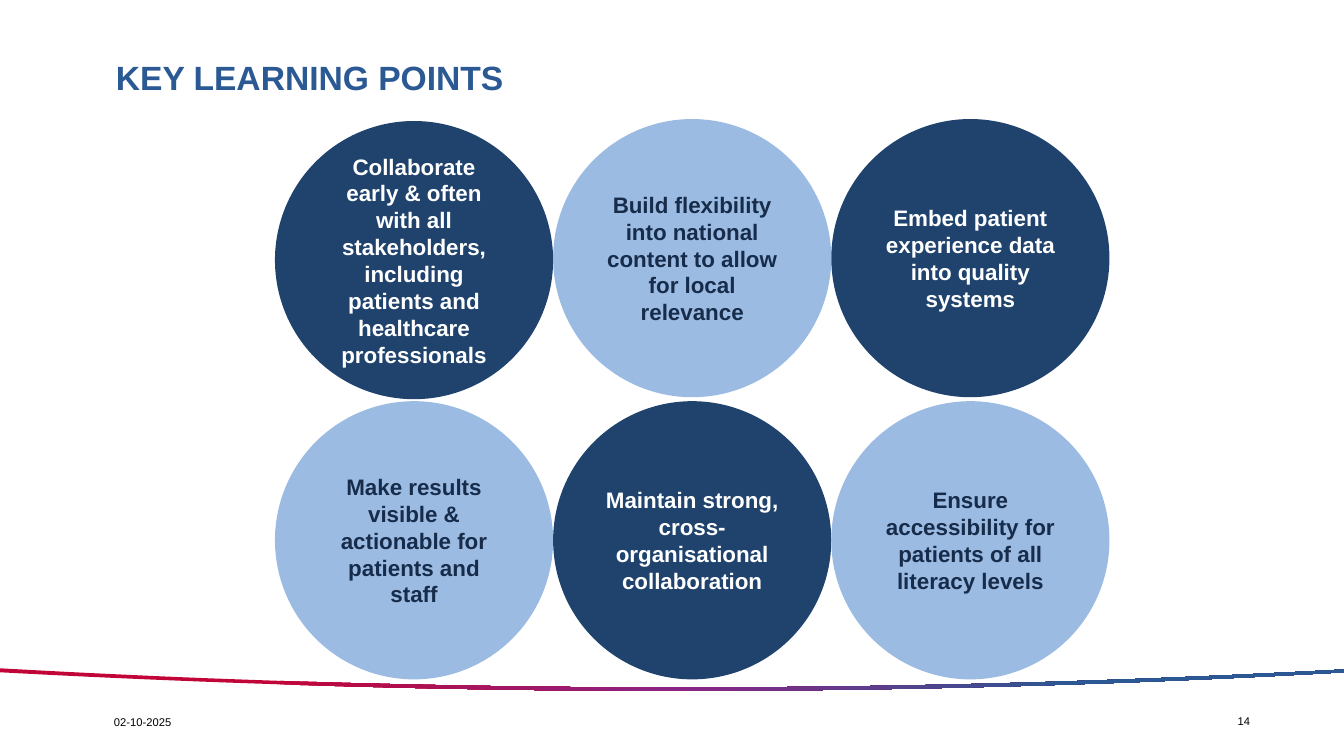
from lxml import etree
from pptx import Presentation
from pptx.dml.color import RGBColor
from pptx.enum.shapes import MSO_SHAPE
from pptx.enum.text import MSO_ANCHOR, PP_ALIGN
from pptx.oxml.ns import qn
from pptx.util import Cm, Pt

# Content
TITLE = "KEY LEARNING POINTS"
LEARNING_POINTS = [
    ["Collaborate early & often with all stakeholders, including patients and healthcare professionals",
     "Build flexibility into national content to allow for local relevance",
     "Embed patient experience data into quality systems"],
    ["Make results visible & actionable for patients and staff",
     "Maintain strong, cross-organisational collaboration",
     "Ensure accessibility for patients of all literacy levels"],
]
FOOTERS = [("02-10-2025", 2.62, 17.91, 5.0), ("14", 30.94, 17.88, 1.45)]

# Style
FONT = "Arial"
BLUE = RGBColor(0x2B, 0x59, 0x93)
NAVY = RGBColor(0x20, 0x43, 0x6E)
LIGHT_BLUE = RGBColor(0x9C, 0xBB, 0xE2)
INK = RGBColor(0x16, 0x2C, 0x4A)
WHITE = RGBColor(0xFF, 0xFF, 0xFF)
BLACK = RGBColor(0x00, 0x00, 0x00)
RED = RGBColor(0xC1, 0x05, 0x38)
PURPLE = RGBColor(0x8C, 0x23, 0x83)
WAVE_STOPS = [(20, RED), (50, PURPLE), (80, BLUE)]
ELLIPSE = MSO_SHAPE.OVAL
MIDDLE = MSO_ANCHOR.MIDDLE
LEFT, CENTER = PP_ALIGN.LEFT, PP_ALIGN.CENTER

# Geometry in centimetres
WIDTH, HEIGHT = 33.87, 19.05
DIAMETER = 7.01
GRID_LEFT = 6.93
ROW_TOPS = [3.0, 10.11]
FIRST_CIRCLE_DROP = 0.05
WAVE_UPPER = (16.84, 17.48, 17.48, 16.87)
WAVE_LOWER = (16.94, 17.55, 17.58, 16.94)
WAVE_STEPS = 60


def write_text(shape, text, size, color, bold=False, align=LEFT):
    frame = shape.text_frame
    frame.word_wrap = True
    paragraph = frame.paragraphs[0]
    paragraph.alignment = align
    run = paragraph.add_run()
    run.text = text
    run.font.name = FONT
    run.font.size = Pt(size)
    run.font.bold = bold
    run.font.color.rgb = color
    return paragraph


def curve_points(heights):
    """Sample a cubic curve that spans the slide width."""
    a, b, c, d = heights
    points = []
    for step in range(WAVE_STEPS + 1):
        t = step / WAVE_STEPS
        u = 1 - t
        y = a * u**3 + 3 * b * u * u * t + 3 * c * u * t * t + d * t**3
        points.append((Cm(WIDTH * t), Cm(y)))
    return points


def add_wave(slide):
    outline = curve_points(WAVE_LOWER) + curve_points(WAVE_UPPER)[::-1]
    builder = slide.shapes.build_freeform(*outline[0])
    builder.add_line_segments(outline[1:], close=True)
    wave = builder.convert_to_shape()
    wave.shadow.inherit = False
    wave.line.fill.background()
    wave.fill.gradient()
    wave.fill.gradient_angle = 0
    # Three colour stops from left to right
    stop_list = wave._element.spPr.find(".//" + qn("a:gsLst"))
    for stop in list(stop_list):
        stop_list.remove(stop)
    for percent, color in WAVE_STOPS:
        stop = etree.SubElement(stop_list, qn("a:gs"), pos=str(percent * 1000))
        etree.SubElement(stop, qn("a:srgbClr"), val=str(color))


def add_title(slide):
    title = slide.shapes.title
    title.left, title.top = Cm(2.92), Cm(0.99)
    title.width, title.height = Cm(29.01), Cm(2.01)
    frame = title.text_frame
    frame.margin_left = frame.margin_right = 0
    frame.margin_top = frame.margin_bottom = 0
    frame.vertical_anchor = MIDDLE
    write_text(title, TITLE, 24, BLUE, bold=True).line_spacing = 0.9


def add_circles(slide):
    for row, texts in enumerate(LEARNING_POINTS):
        for column, text in enumerate(texts):
            left = GRID_LEFT + column * DIAMETER
            top = ROW_TOPS[row] + (FIRST_CIRCLE_DROP if row == column == 0 else 0)
            dark = (row + column) % 2 == 0
            circle = slide.shapes.add_shape(
                ELLIPSE, Cm(left), Cm(top), Cm(DIAMETER), Cm(DIAMETER))
            circle.shadow.inherit = False
            circle.fill.solid()
            circle.fill.fore_color.rgb = NAVY if dark else LIGHT_BLUE
            circle.line.fill.background()
            circle.text_frame.vertical_anchor = MIDDLE
            write_text(circle, text, 16, WHITE if dark else INK, True, CENTER)


def main():
    presentation = Presentation()
    presentation.slide_width, presentation.slide_height = Cm(WIDTH), Cm(HEIGHT)
    slide = presentation.slides.add_slide(presentation.slide_layouts[5])
    add_wave(slide)
    add_title(slide)
    # Date and slide number
    for text, left, top, width in FOOTERS:
        footer = slide.shapes.add_textbox(Cm(left), Cm(top), Cm(width), Cm(0.6))
        write_text(footer, text, 8, BLACK)
    add_circles(slide)
    presentation.save("out.pptx")


if __name__ == "__main__":
    main()
